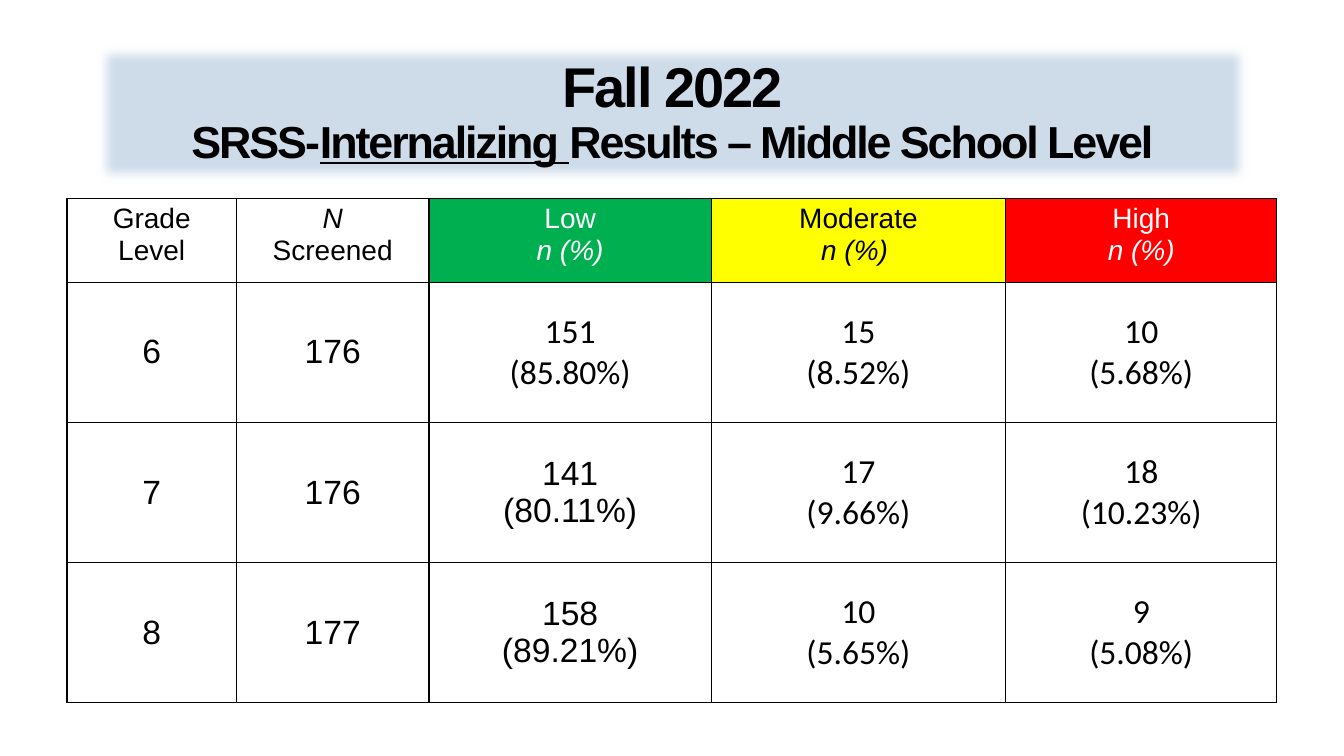
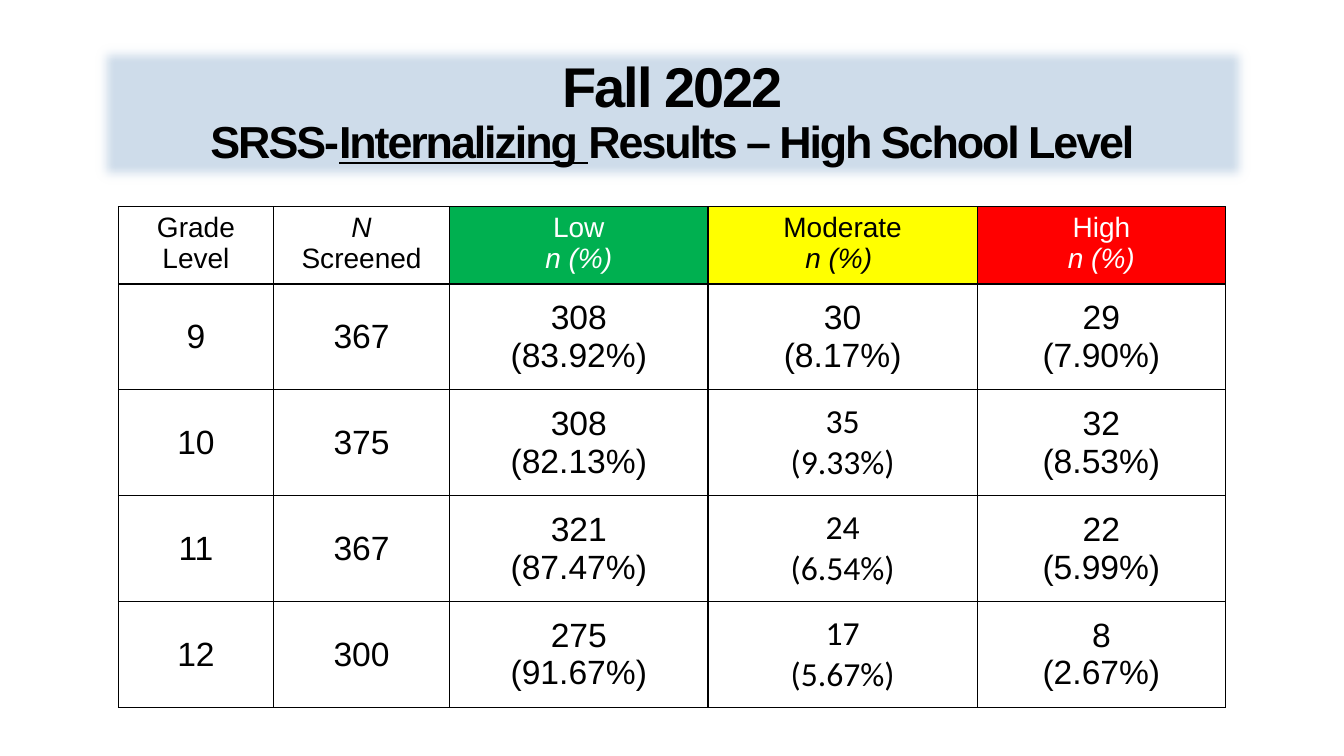
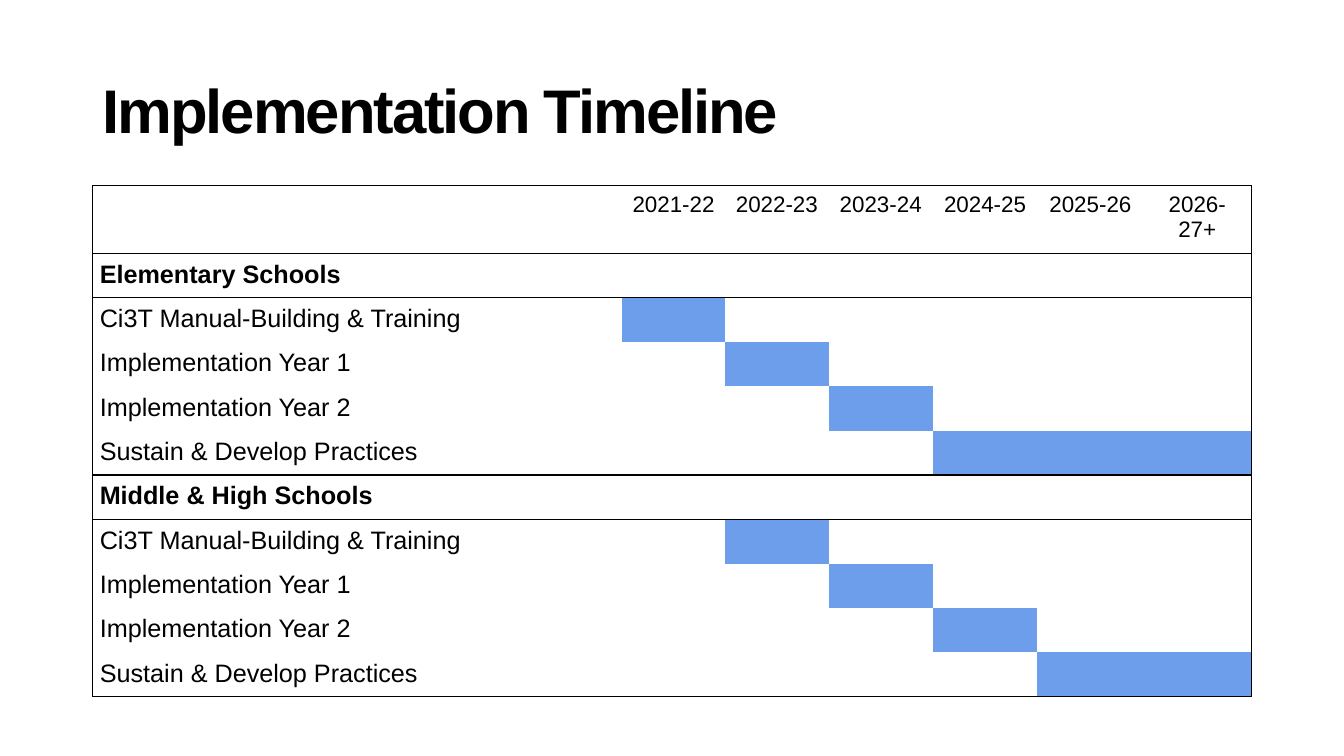
"""Build two screening result tables and an implementation timeline."""
from lxml import etree
from pptx import Presentation
from pptx import util as u
from pptx.dml.color import RGBColor
from pptx.enum import text
from pptx.oxml.ns import qn

BLACK = RGBColor(0x00, 0x00, 0x00)
WHITE = RGBColor(0xFF, 0xFF, 0xFF)
GREEN = RGBColor(0x00, 0xB0, 0x50)
YELLOW = RGBColor(0xFF, 0xFF, 0x00)
RED = RGBColor(0xFF, 0x00, 0x00)
PALE_BLUE = RGBColor(0xCE, 0xDC, 0xEA)
BAR_BLUE = RGBColor(0x6D, 0x9E, 0xEB)
PLAIN_TABLE = "{2D5ABB26-0587-4C30-8999-92F81FD0307C}"
CENTER, LEFT = text.PP_ALIGN.CENTER, text.PP_ALIGN.LEFT
TOP, MIDDLE = text.MSO_ANCHOR.TOP, text.MSO_ANCHOR.MIDDLE

deck = Presentation()
deck.slide_width, deck.slide_height = u.Inches(13.33), u.Inches(7.5)


def add_grid(page, top, widths, heights):
    """Add an unstyled table centred across the page."""
    width = u.Inches(sum(widths))
    frame = page.shapes.add_table(
        len(heights), len(widths), (deck.slide_width - width) // 2,
        u.Inches(top), width, u.Inches(sum(heights)))
    table = frame.table
    table.first_row = table.horz_banding = False
    table._tbl.tblPr.find(qn("a:tableStyleId")).text = PLAIN_TABLE
    for column, size in zip(table.columns, widths):
        column.width = u.Inches(size)
    for row, size in zip(table.rows, heights):
        row.height = u.Inches(size)
    return table


def style_cell(cell, words, size, sides, fill=None, color=BLACK, font="Arial",
               align=CENTER, anchor=TOP, bold=False):
    """Write a cell and give it black lines on the named sides."""
    properties = cell._tc.get_or_add_tcPr()
    for side in "LRTB":
        if side in sides:
            line = etree.SubElement(properties, qn(f"a:ln{side}"), w="12700")
            solid = etree.SubElement(line, qn("a:solidFill"))
            etree.SubElement(solid, qn("a:srgbClr"), val=str(BLACK))
    if fill is None:
        cell.fill.background()
    else:
        cell.fill.solid()
        cell.fill.fore_color.rgb = fill
    cell.vertical_anchor = anchor
    cell.text_frame.text = words
    for para in cell.text_frame.paragraphs:
        para.alignment = align
        for span in para.runs:
            span.font.name, span.font.size = font, u.Pt(size)
            span.font.color.rgb, span.font.bold = color, bold
            span.font.italic = span.text == "N" or span.text.startswith("n (")


titles = [
    [("Fall 2022", 40), ("\n", 40), ("SRSS-", 32), ("Internalizing ", 32),
     (f"Results – {school} School Level", 32)]
    for school in ("Middle", "High")
] + [[("Implementation Timeline", 44)]]
pages = []
for spans in titles:
    page = deck.slides.add_slide(deck.slide_layouts[6])
    pages.append(page)
    box = page.shapes.add_textbox(
        u.Inches(0.92), u.Inches(0.4), u.Inches(11.5), u.Inches(1.45))
    box.text_frame.word_wrap = True
    box.text_frame.vertical_anchor = MIDDLE
    para = box.text_frame.paragraphs[0]
    para.line_spacing = 0.9
    if len(spans) > 1:
        para.alignment = CENTER
        box.fill.solid()
        box.fill.fore_color.rgb = PALE_BLUE
        box.shadow.inherit = False
        effects = box._element.spPr.find(qn("a:effectLst"))
        etree.SubElement(effects, qn("a:softEdge"), rad="112500")
    for words, size in spans:
        if words == "\n":
            para.add_line_break()
            continue
        span = para.add_run()
        span.text = words
        span.font.name, span.font.size = "Arial", u.Pt(size)
        span.font.bold, span.font.color.rgb = True, BLACK
        span.font.underline = words == "Internalizing "
        span._r.get_or_add_rPr().set("spc", "-150")

headings = [
    ("Grade Level", None, BLACK), ("N\nScreened", None, BLACK),
    ("Low\nn (%)", GREEN, WHITE), ("Moderate\nn (%) ", YELLOW, BLACK),
    ("High\nn (%)", RED, WHITE)]
result_widths = [1.68, 1.91, 2.8, 2.92, 2.69]
middle_results = [
    ("6", "176", "151\n(85.80%)", "15\n(8.52%)", "10\n(5.68%)"),
    ("7", "176", "141\n(80.11%)", "17\n(9.66%)", "18\n(10.23%)"),
    ("8", "177", "158\n(89.21%)", "10\n(5.65%)", "9\n(5.08%)")]
high_results = [
    ("9", "367", "308\n(83.92%)", "30\n(8.17%)", "29\n(7.90%)"),
    ("10", "375", "308\n(82.13%)", "35\n(9.33%)", "32\n(8.53%)"),
    ("11", "367", "321\n(87.47%)", "24\n(6.54%)", "22\n(5.99%)"),
    ("12", "300", "275\n(91.67%)", "17\n(5.67%)", "8\n(2.67%)")]
calibri_columns = {"6": (2, 3, 4), "7": (3, 4), "8": (3, 4),
                   "10": (3,), "11": (3,), "12": (3,)}
result_tables = [
    (middle_results, 1.97, 12, 0.83, 1.39),
    (high_results, 2.05, 10.98, 0.72, 1.05)]
for page, (results, top, width, header, height) in zip(pages, result_tables):
    scale = width / sum(result_widths)
    table = add_grid(page, top, [share * scale for share in result_widths],
                     [header] + [height] * len(results))
    for column, (words, fill, color) in enumerate(headings):
        style_cell(table.cell(0, column), words, 20, "LRTB", fill, color)
    for row, values in enumerate(results, 1):
        for column, words in enumerate(values):
            calibri = column in calibri_columns.get(values[0], ())
            style_cell(table.cell(row, column), words, 24, "LRTB",
                       font="Calibri" if calibri else "Arial", anchor=MIDDLE)

years = ["2021-22", "2022-23", "2023-24", "2024-25", "2025-26", "2026-27+"]
phases = ["Ci3T Manual-Building & Training", "Implementation Year 1",
          "Implementation Year 2", "Sustain & Develop Practices"]
timeline = [("", ())]
for start, schools in enumerate(["Elementary Schools", "Middle & High Schools"], 1):
    timeline.append((schools, ()))
    for step, phase in enumerate(phases):
        first = start + step
        last = len(years) if phase == phases[-1] else first
        timeline.append((phase, range(first, last + 1)))
section_rows = (1, 2 + len(phases))
last_rows = (0, section_rows[1] - 1, len(timeline) - 1)

table = add_grid(pages[2], 1.84, [5.25, 1.02, 1.03, 1.03, 1.04, 1.05, 1.07],
                 [0.65] + [0.43] * (len(timeline) - 1))
for row in section_rows:
    table.cell(row, 0).merge(table.cell(row, len(years)))
for row, (label, active) in enumerate(timeline):
    for column in range(len(years) + 1):
        cell = table.cell(row, column)
        sides = "L" if column == 0 else ""
        sides += "R" if column == len(years) or cell.is_merge_origin else ""
        sides += "T" if row == 0 or row in section_rows else ""
        sides += "B" if row in last_rows else ""
        words = label if column == 0 else years[column - 1] if row == 0 else ""
        style_cell(cell, words, 16 if row == 0 else 18, sides,
                   BAR_BLUE if column in active else None,
                   align=CENTER if row == 0 else LEFT, bold=row in section_rows)
        cell.margin_left = cell.margin_right = u.Inches(0.07)
        cell.margin_top = cell.margin_bottom = u.Inches(0.07)

deck.save("out.pptx")
